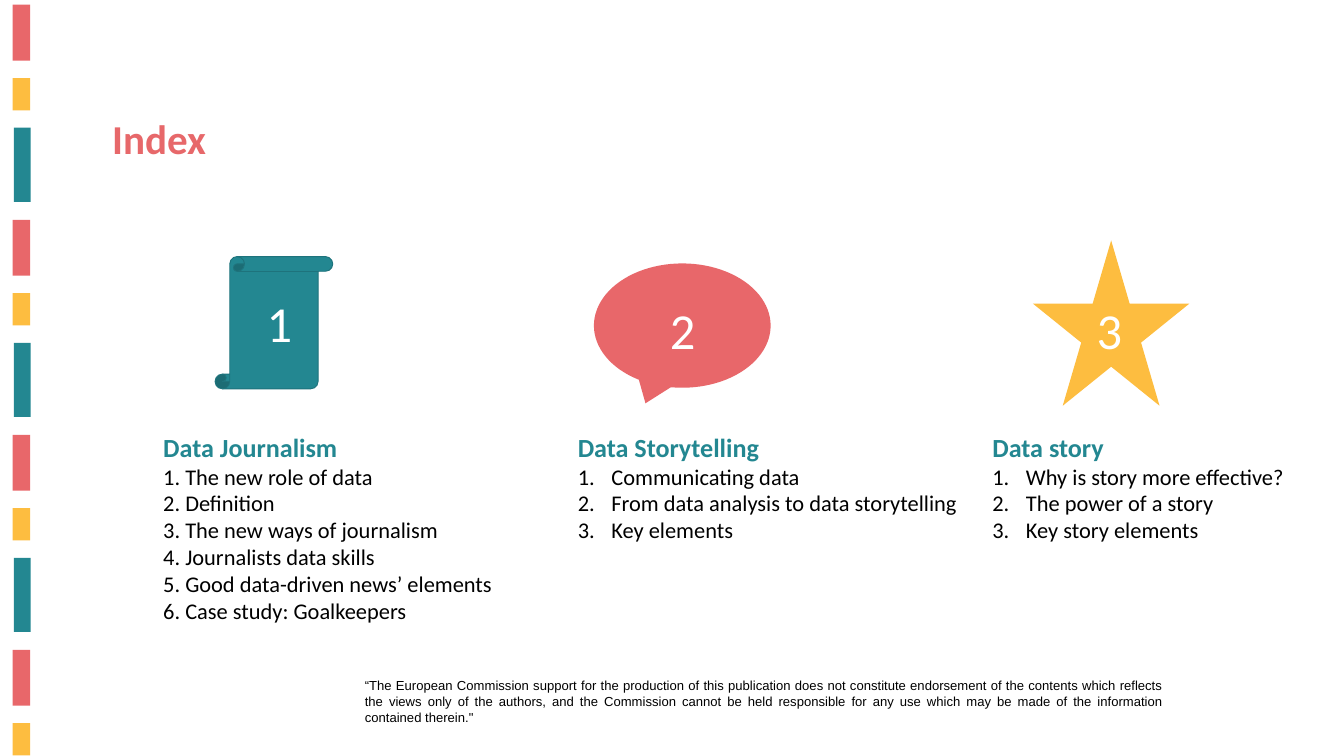
"""Build the index slide with three numbered topics."""
import dataclasses
import itertools
import typing

import pptx
import pptx.dml.color
import pptx.enum.shapes
import pptx.enum.text
import pptx.oxml
import pptx.oxml.ns
import pptx.util

Cm = pptx.util.Cm
SHAPES = pptx.enum.shapes.MSO_SHAPE
ALIGN = pptx.enum.text.PP_ALIGN


@dataclasses.dataclass(frozen=True)
class Theme:
    teal: str = "238791"
    dark_teal: str = "1E737C"
    coral: str = "E8676A"
    title_coral: str = "E7686A"
    amber: str = "FDBD40"
    black: str = "000000"
    white: str = "FFFFFF"
    font: str = "Calibri"
    notice_font: str = "Arial"
    title_size: int = 44
    number_size: int = 54
    heading_size: int = 28
    item_size: int = 24
    notice_size: int = 14


class Box(typing.NamedTuple):
    left: float
    top: float
    width: float
    height: float

    def lengths(self) -> list[int]:
        return [Cm(value) for value in self]


class Stripe(typing.NamedTuple):
    box: Box
    color: str


class Topic(typing.NamedTuple):
    heading: str
    items: list[str]
    text_box: Box
    numbered: bool
    icon: int
    icon_box: Box
    icon_color: str
    icon_line: str | None
    number_box: Box


THEME = Theme()
STRIPE_PITCH = 8.13
STRIPE_COUNT = 11
STRIPES = [
    Stripe(Box(0.48, 0.18, 0.66, 2.11), THEME.coral),
    Stripe(Box(0.48, 2.95, 0.66, 1.22), THEME.amber),
    Stripe(Box(0.53, 4.83, 0.63, 2.8), THEME.teal),
]
TOPICS = [
    Topic("Data Journalism",
          ["1. The new role of data", "2. Definition", "3. The new ways of journalism",
           "4. Journalists data skills", "5. Good data-driven news’ elements",
           "6. Case study: Goalkeepers"],
          Box(5.92, 16.18, 13.54, 8.81), False, SHAPES.VERTICAL_SCROLL,
          Box(8.13, 9.7, 4.45, 5), THEME.teal, THEME.dark_teal, Box(9.83, 10.92, 4.01, 2.57)),
    Topic("Data Storytelling",
          ["Communicating data", "From data analysis to data storytelling", "Key elements"],
          Box(21.59, 16.18, 15.24, 4.52), True, SHAPES.OVAL_CALLOUT,
          Box(22.45, 9.96, 6.68, 4.7), THEME.coral, None, Box(25.07, 11.2, 2.74, 2.57)),
    Topic("Data story",
          ["Why is story more effective?", "The power of a story", "Key story elements"],
          Box(37.26, 16.18, 12.27, 4.52), True, SHAPES.STAR_5_POINT,
          Box(39.04, 9.09, 5.92, 6.25), THEME.amber, None, Box(41.2, 11.2, 3.81, 2.57)),
]
NOTICE = (
    "“The European Commission support for the production of this publication does not "
    "constitute endorsement of the contents which reflects the views only of the authors, "
    "and the Commission cannot be held responsible for any use which may be made of the "
    "information contained therein.\""
)


def rgb(color: str) -> pptx.dml.color.RGBColor:
    return pptx.dml.color.RGBColor.from_string(color)


def add_figure(slide, kind: int, box: Box, color: str, line: str | None = None) -> None:
    shape = slide.shapes.add_shape(kind, *box.lengths())
    shape.shadow.inherit = False
    shape.fill.solid()
    shape.fill.fore_color.rgb = rgb(color)
    if line:
        shape.line.color.rgb = rgb(line)
        shape.line.width = pptx.util.Pt(1)
    else:
        shape.line.fill.background()


def add_text_box(slide, box: Box):
    text_frame = slide.shapes.add_textbox(*box.lengths()).text_frame
    text_frame.word_wrap = True
    text_frame.auto_size = pptx.enum.text.MSO_AUTO_SIZE.SHAPE_TO_FIT_TEXT
    return text_frame


def number_paragraph(paragraph) -> None:
    properties = paragraph._p.get_or_add_pPr()
    indent = Cm(1.27)
    properties.set("marL", str(indent))
    properties.set("indent", str(-indent))
    numbering = pptx.oxml.parse_xml(
        f'<a:buAutoNum {pptx.oxml.ns.nsdecls("a")} type="arabicPeriod"/>')
    properties.append(numbering)


def write(paragraph, text: str, *, size: int, color: str, font: str = THEME.font,
          bold: bool = False, align: int = ALIGN.LEFT, numbered: bool = False) -> None:
    if numbered:
        number_paragraph(paragraph)
    paragraph.alignment = align
    run = paragraph.add_run()
    run.text = text
    run.font.name = font
    run.font.size = pptx.util.Pt(size)
    run.font.bold = bold
    run.font.color.rgb = rgb(color)


def draw_stripes(slide) -> None:
    for index, stripe in enumerate(itertools.islice(itertools.cycle(STRIPES), STRIPE_COUNT)):
        top = stripe.box.top + index // len(STRIPES) * STRIPE_PITCH
        add_figure(slide, SHAPES.RECTANGLE, stripe.box._replace(top=top), stripe.color)


def draw_topic(slide, number: int, topic: Topic) -> None:
    add_figure(slide, topic.icon, topic.icon_box, topic.icon_color, topic.icon_line)
    write(add_text_box(slide, topic.number_box).paragraphs[0], str(number),
          size=THEME.number_size, color=THEME.white)
    text_frame = add_text_box(slide, topic.text_box)
    write(text_frame.paragraphs[0], topic.heading,
          size=THEME.heading_size, color=THEME.teal, bold=True)
    for item in topic.items:
        write(text_frame.add_paragraph(), item,
              size=THEME.item_size, color=THEME.black, numbered=topic.numbered)


def main() -> None:
    presentation = pptx.Presentation()
    presentation.slide_width = Cm(50.8)
    presentation.slide_height = Cm(28.58)
    slide = presentation.slides.add_slide(presentation.slide_layouts[6])
    draw_stripes(slide)
    write(add_text_box(slide, Box(13.54, 25.5, 30.68, 2.06)).paragraphs[0], NOTICE,
          size=THEME.notice_size, color=THEME.black, font=THEME.notice_font,
          align=ALIGN.JUSTIFY)
    write(add_text_box(slide, Box(3.99, 4.17, 17.2, 2.13)).paragraphs[0], "Index",
          size=THEME.title_size, color=THEME.title_coral, bold=True)
    for number, topic in enumerate(TOPICS, start=1):
        draw_topic(slide, number, topic)
    presentation.save("out.pptx")


if __name__ == "__main__":
    main()
